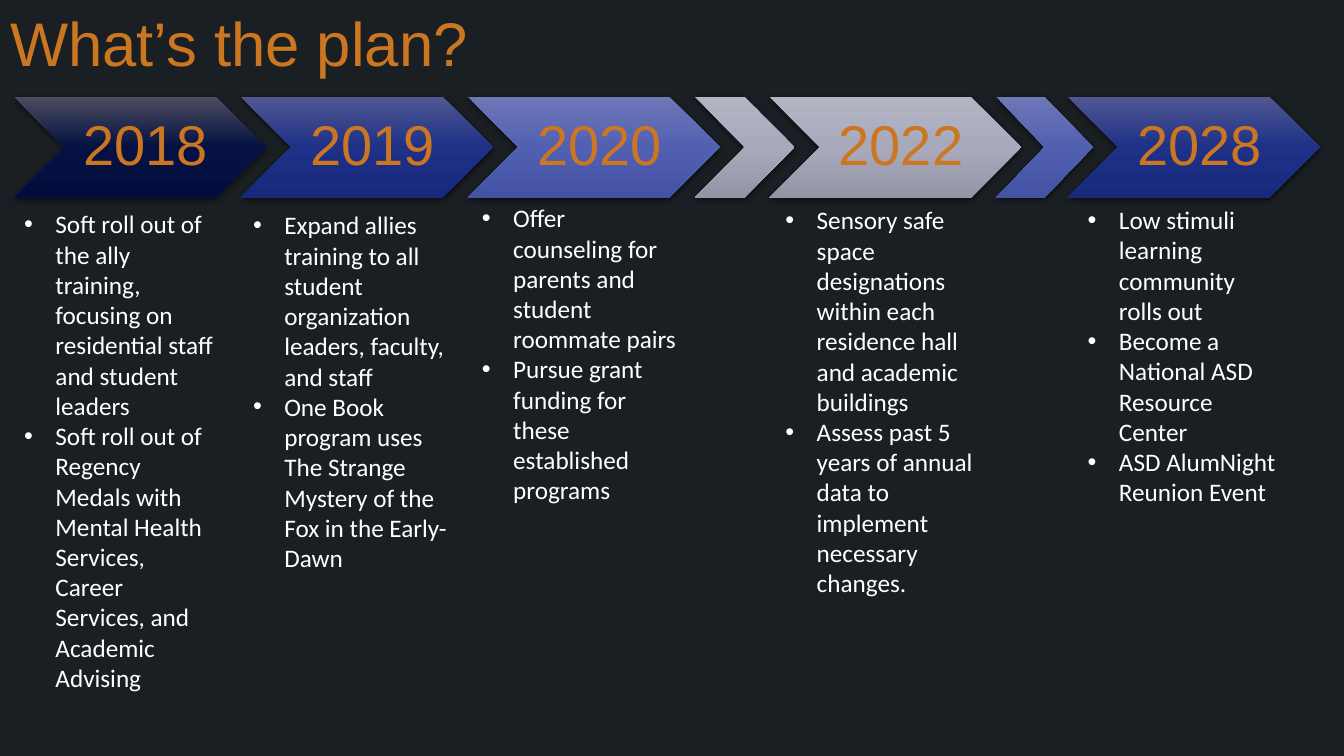
import pptx
import pptx.util
import pptx.dml.color
import pptx.enum.shapes
import pptx.enum.text
import pptx.oxml
import pptx.oxml.ns
import copy
from dataclasses import dataclass

Inches, Pt = pptx.util.Inches, pptx.util.Pt
RGB = pptx.dml.color.RGBColor.from_string
Align, Anchor = pptx.enum.text.PP_ALIGN, pptx.enum.text.MSO_ANCHOR
AutoSize = pptx.enum.text.MSO_AUTO_SIZE
qn = pptx.oxml.ns.qn

TITLE = "What’s the plan?"

# Year (None for a spacer), width in inches, gradient name
CHEVRONS = [
    ("2018", 2.5, "navy"),
    ("2019", 2.5, "blue"),
    ("2020", 2.5, "violet"),
    (None, 0.99, "grey"),
    ("2022", 2.5, "grey"),
    (None, 0.96, "violet"),
    ("2028", 2.5, "blue"),
]

# Left, top, width and height in inches, then the plans of that year
COLUMNS = [
    (0.14, 2.02, 2.11, 4.95, [
        "Soft roll out of the ally training, focusing on residential staff and student leaders",
        "Soft roll out of Regency Medals with Mental Health Services, Career Services, and Academic Advising",
    ]),
    (2.41, 2.03, 2.13, 3.74, [
        "Expand allies training to all student organization leaders, faculty, and staff",
        "One Book program uses The Strange Mystery of the Fox in the Early-Dawn",
    ]),
    (4.68, 1.96, 2.13, 3.74, [
        "Offer counseling for parents and student roommate pairs",
        "Pursue grant funding for these established programs",
    ]),
    (7.69, 1.98, 2.13, 4.04, [
        "Sensory safe space designations within each residence hall and academic buildings",
        "Assess past 5 years of annual data to implement necessary changes.",
    ]),
    (10.69, 1.98, 2.13, 3.13, [
        "Low stimuli learning community rolls out",
        "Become a National ASD Resource Center",
        "ASD AlumNight Reunion Event",
    ]),
]


@dataclass(frozen=True)
class Theme:
    background: str = "1A1F24"
    accent: str = "CC7622"
    body: str = "FFFFFF"
    heading_font: str = "Arial"
    body_font: str = "Calibri"
    title_size: int = 44
    year_size: int = 40
    body_size: int = 18


THEME = Theme()
GRADIENTS = {
    "navy": ("4B4C5E", "041142", "010E3D"),
    "blue": ("505791", "1E3187", "16297C"),
    "violet": ("6D77B6", "5260B2", "4452A3"),
    "grey": ("B3B4C3", "A8AABC", "9496A8"),
}
CHEVRON_LEFT, CHEVRON_TOP, CHEVRON_HEIGHT, OVERLAP = 0.14, 0.96, 1, 0.25
BULLET_INDENT = 0.31

FRAME = dict(word_wrap=True, auto_size=AutoSize.SHAPE_TO_FIT_TEXT, vertical_anchor=Anchor.TOP,
             margin_left=Inches(0.1), margin_right=Inches(0.1),
             margin_top=Inches(0.05), margin_bottom=Inches(0.05))
YEAR_FRAME = dict(word_wrap=False, vertical_anchor=Anchor.MIDDLE,
                  margin_left=Inches(0.17), margin_right=Inches(0.06),
                  margin_top=Inches(0.06), margin_bottom=Inches(0.06))
PARA = dict(alignment=Align.LEFT, line_spacing=1.0, space_before=Pt(0), space_after=Pt(0))
YEAR_PARA = dict(alignment=Align.CENTER, line_spacing=0.9)
TITLE_FONT = dict(name=THEME.heading_font, size=Pt(THEME.title_size), bold=False)
YEAR_FONT = dict(name=THEME.heading_font, size=Pt(THEME.year_size))
BODY_FONT = dict(name=THEME.body_font, size=Pt(THEME.body_size), bold=False)


def apply(target, values):
    for name, value in values.items():
        setattr(target, name, value)


def place(shape, left, top, width, height):
    apply(shape, dict(left=Inches(left), top=Inches(top),
                      width=Inches(width), height=Inches(height)))


def write(para, text, para_format, font_format, color):
    span = para.add_run()
    span.text = text
    apply(para, para_format)
    apply(span.font, font_format)
    span.font.color.rgb = RGB(color)


def fill_gradient(shape, colors):
    """Fill from top to bottom with evenly spaced colours."""
    shape.fill.gradient()
    shape.fill.gradient_angle = 270
    stop_list = shape._element.spPr.find(".//" + qn("a:gsLst"))
    stop_list.append(copy.deepcopy(stop_list[-1]))
    for index, (stop, color) in enumerate(zip(shape.fill.gradient_stops, colors)):
        stop.color.rgb = RGB(color)
        stop.position = index / (len(colors) - 1)


def add_shadow(shape):
    shape.shadow.inherit = False
    shape._element.spPr.find(qn("a:effectLst")).append(pptx.oxml.parse_xml(
        f'<a:outerShdw {pptx.oxml.ns.nsdecls("a")} blurRad="{Pt(4.5)}" dist="{Pt(1.5)}" '
        'dir="5400000" algn="ctr" rotWithShape="0">'
        '<a:srgbClr val="000000"><a:alpha val="63000"/></a:srgbClr></a:outerShdw>'))


def add_bullet(para):
    properties = para._p.get_or_add_pPr()
    properties.set("marL", str(Inches(BULLET_INDENT)))
    properties.set("indent", str(-Inches(BULLET_INDENT)))
    for tag, attribute, value in (("buFont", "typeface", "Arial"), ("buChar", "char", "•")):
        properties.append(pptx.oxml.parse_xml(
            f'<a:{tag} {pptx.oxml.ns.nsdecls("a")} {attribute}="{value}"/>'))


def add_timeline(slide):
    left = CHEVRON_LEFT
    for year, width, gradient in CHEVRONS:
        chevron = slide.shapes.add_shape(
            pptx.enum.shapes.MSO_SHAPE.CHEVRON, Inches(left), Inches(CHEVRON_TOP),
            Inches(width), Inches(CHEVRON_HEIGHT))
        fill_gradient(chevron, GRADIENTS[gradient])
        chevron.line.fill.background()
        add_shadow(chevron)
        if year:
            apply(chevron.text_frame, YEAR_FRAME)
            write(chevron.text_frame.paragraphs[0], year, YEAR_PARA, YEAR_FONT, THEME.accent)
        left += width - OVERLAP


def add_columns(slide):
    """Fill the layout's four body placeholders and one more text box."""
    boxes = [box for box in slide.placeholders if box.placeholder_format.idx > 0]
    boxes.append(slide.shapes.add_textbox(0, 0, 0, 0))
    for box, (left, top, width, height, plans) in zip(boxes, COLUMNS):
        place(box, left, top, width, height)
        frame = box.text_frame
        apply(frame, FRAME)
        for index, plan in enumerate(plans):
            para = frame.add_paragraph() if index else frame.paragraphs[0]
            add_bullet(para)
            write(para, plan, PARA, BODY_FONT, THEME.body)


def main():
    deck = pptx.Presentation()
    deck.slide_width, deck.slide_height = Inches(13.33), Inches(7.5)
    page = deck.slides.add_slide(deck.slide_layouts.get_by_name("Comparison"))
    page.background.fill.solid()
    page.background.fill.fore_color.rgb = RGB(THEME.background)

    title = page.shapes.title
    place(title, 0, 0, 12.82, 0.84)
    apply(title.text_frame, FRAME)
    write(title.text_frame.paragraphs[0], TITLE, PARA, TITLE_FONT, THEME.accent)

    add_timeline(page)
    add_columns(page)
    deck.save("out.pptx")


if __name__ == "__main__":
    main()
